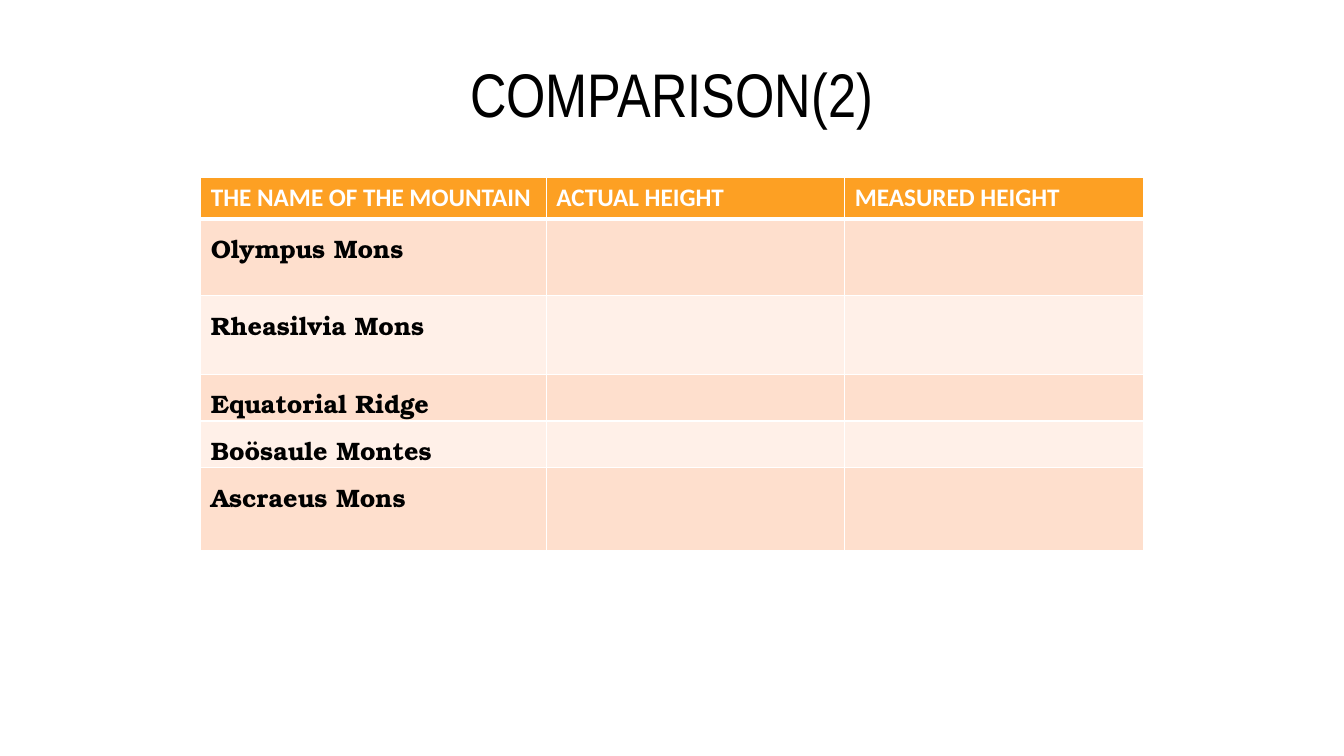
from lxml import etree
from pptx import Presentation, util as u
from pptx.dml.color import RGBColor
from pptx.enum import text
from pptx.oxml import ns

BLACK = RGBColor(0x00, 0x00, 0x00)
WHITE = RGBColor(0xFF, 0xFF, 0xFF)
ORANGE = RGBColor(0xFD, 0xA0, 0x23)
PEACH = RGBColor(0xFE, 0xDF, 0xCD)
PALE_PEACH = RGBColor(0xFF, 0xF0, 0xE8)

HEADINGS = ["THE NAME OF THE MOUNTAIN", "ACTUAL HEIGHT", "MEASURED HEIGHT"]
MOUNTAINS = ["Olympus Mons", "Rheasilvia Mons", "Equatorial Ridge",
             "Boösaule Montes", "Ascraeus Mons"]
COLUMN_WIDTHS = [8.71, 7.52, 7.52]
ROW_HEIGHTS = [1.03, 1.94, 1.98, 1.18, 1.18, 2.08]


def add_run(paragraph, words, font, size, color, bold=False):
    run = paragraph.add_run()
    run.text = words
    run.font.name = font
    run.font.size = u.Pt(size)
    run.font.bold = bold
    run.font.color.rgb = color


def add_border(cell, side, points):
    line = etree.SubElement(cell._tc.get_or_add_tcPr(), ns.qn("a:ln" + side),
                            w=str(u.Pt(points)))
    fill = etree.SubElement(line, ns.qn("a:solidFill"))
    etree.SubElement(fill, ns.qn("a:srgbClr"), val=str(WHITE))


deck = Presentation()
deck.slide_width, deck.slide_height = u.Cm(33.87), u.Cm(19.05)
slide = deck.slides.add_slide(deck.slide_layouts[6])

title = slide.shapes.add_textbox(u.Cm(1.69), u.Cm(0.76), u.Cm(30.48), u.Cm(3.18)).text_frame
title.word_wrap = True
title.vertical_anchor = text.MSO_ANCHOR.MIDDLE
title.paragraphs[0].alignment = text.PP_ALIGN.CENTER
add_run(title.paragraphs[0], "COMPARISON(2)", "Arial Narrow", 44, BLACK)

comparison = slide.shapes.add_table(
    len(ROW_HEIGHTS), len(COLUMN_WIDTHS), u.Cm(5.06), u.Cm(4.48),
    u.Cm(sum(COLUMN_WIDTHS)), u.Cm(sum(ROW_HEIGHTS))).table
for column, width in zip(comparison.columns, COLUMN_WIDTHS):
    column.width = u.Cm(width)

rows = [HEADINGS] + [[mountain, "", ""] for mountain in MOUNTAINS]
for r, entries in enumerate(rows):
    comparison.rows[r].height = u.Cm(ROW_HEIGHTS[r])
    band = ORANGE if r == 0 else PEACH if r % 2 else PALE_PEACH
    for c, entry in enumerate(entries):
        cell = comparison.cell(r, c)
        for side in "LRTB":
            under_heading = (r, side) in [(0, "B"), (1, "T")]
            add_border(cell, side, 3 if under_heading else 1)
        cell.fill.solid()
        cell.fill.fore_color.rgb = band
        paragraph = cell.text_frame.paragraphs[0]
        if r == 0:
            add_run(paragraph, entry, "Calibri", 18, WHITE, bold=True)
        elif entry:
            paragraph.line_spacing = 1.15
            add_run(paragraph, entry, "TeX Gyre Bonum", 18, BLACK, bold=True)

deck.save("out.pptx")
